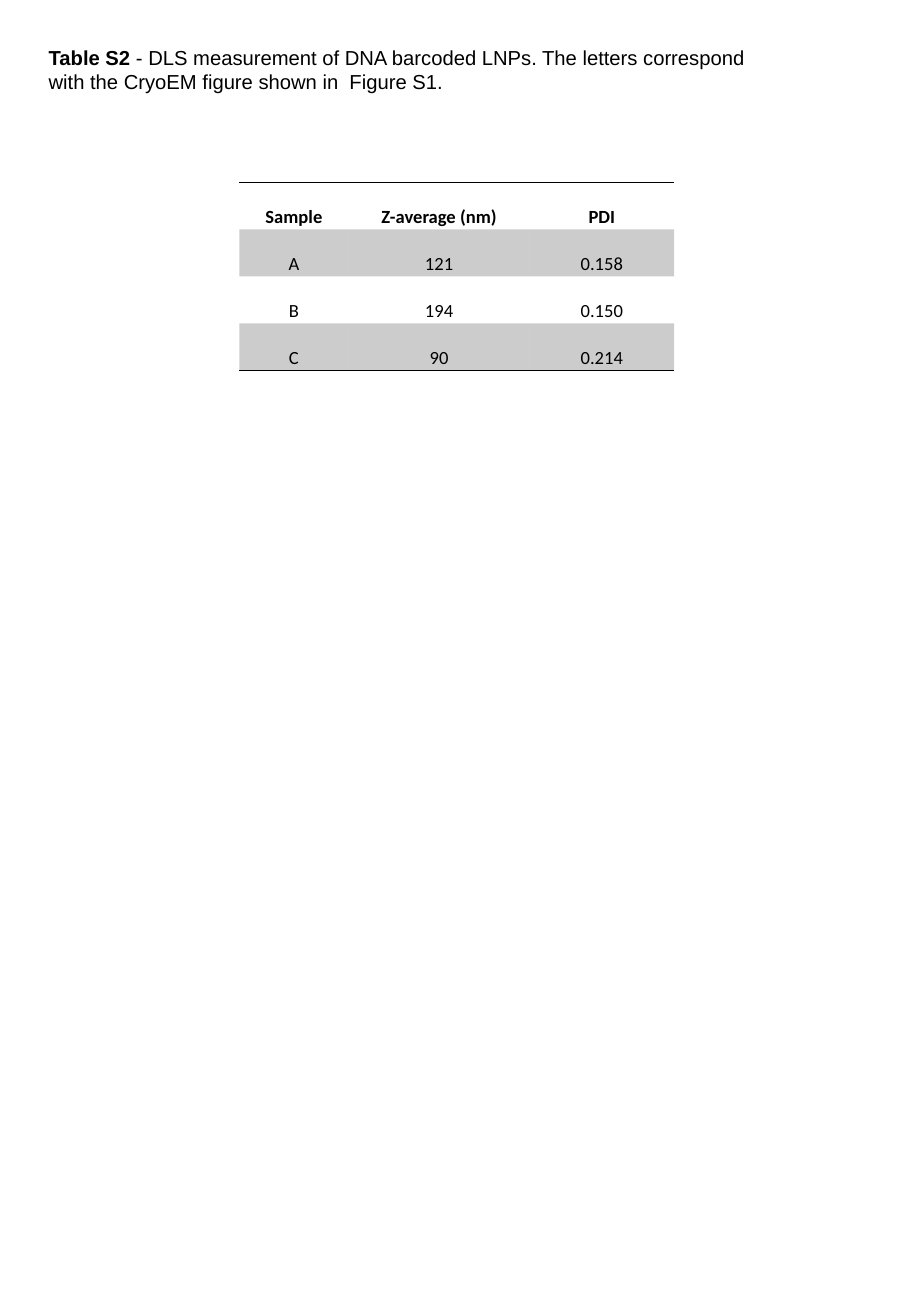
from lxml import etree
from pptx import Presentation
from pptx import util as u
from pptx.dml import color
from pptx.enum import text
from pptx.oxml import ns

BLACK = "000000"
NO_STYLE = "{2D5ABB26-0587-4C30-8999-92F81FD0307C}"
CAPTION = [
    ("Table S2 ", True),
    ("- DLS measurement of DNA barcoded LNPs. The letters correspond "
     "with the CryoEM figure shown in  Figure S1.", False),
]
MEASUREMENTS = [
    ("Sample", "Z-average (nm)", "PDI"),
    ("A", "121", "0.158"),
    ("B", "194", "0.150"),
    ("C", "90", "0.214"),
]
COLUMN_WIDTHS = (0.9, 1.49, 1.19)


def set_color(color_format, hex_value):
    color_format.rgb = color.RGBColor.from_string(hex_value)


def set_attributes(target, values):
    for name, value in values.items():
        setattr(target, name, value)


def add_run(paragraph, content, font_values):
    run = paragraph.add_run()
    run.text = content
    set_attributes(run.font, font_values)
    set_color(run.font.color, BLACK)


def add_borders(cell, sides):
    """Draw a 1 pt line on the named sides; the other sides stay empty."""
    properties = cell._tc.get_or_add_tcPr()
    for position, side in enumerate("LRTB"):
        line = etree.Element(ns.qn(f"a:ln{side}"), w=str(u.Pt(1)))
        if side in sides:
            fill = etree.SubElement(line, ns.qn("a:solidFill"))
            etree.SubElement(fill, ns.qn("a:srgbClr"), val=BLACK)
        else:
            etree.SubElement(line, ns.qn("a:noFill"))
        properties.insert(position, line)


def shade(cell, opacity):
    cell.fill.solid()
    set_color(cell.fill.fore_color, BLACK)
    shade_color = cell._tc.tcPr.find(".//" + ns.qn("a:srgbClr"))
    etree.SubElement(shade_color, ns.qn("a:alpha"), val=str(opacity * 1000))


def add_caption(slide, left, top, width, height):
    title = slide.shapes.title
    set_attributes(title, {
        "left": u.Inches(left), "top": u.Inches(top),
        "width": u.Inches(width), "height": u.Inches(height),
    })
    set_attributes(title.text_frame, {
        "word_wrap": True,
        "auto_size": text.MSO_AUTO_SIZE.NONE,
        "vertical_anchor": text.MSO_ANCHOR.TOP,
    })
    paragraph = title.text_frame.paragraphs[0]
    paragraph.alignment = text.PP_ALIGN.LEFT
    for content, bold in CAPTION:
        add_run(paragraph, content,
                {"name": "Arial", "size": u.Pt(12), "bold": bold})


def fill_cell(cell, content, is_header):
    set_attributes(cell, {
        "margin_left": u.Inches(0.07), "margin_right": u.Inches(0.07),
        "margin_top": 0, "margin_bottom": 0,
    })
    paragraph = cell.text_frame.paragraphs[0]
    set_attributes(paragraph, {
        "alignment": text.PP_ALIGN.CENTER,
        "line_spacing": 2.0,
        "space_after": u.Pt(8),
    })
    add_run(paragraph, content,
            {"name": "Calibri", "size": u.Pt(11), "bold": is_header})


def add_measurements(slide, left, top, width, height):
    row_count = len(MEASUREMENTS)
    frame = slide.shapes.add_table(
        row_count, len(COLUMN_WIDTHS),
        *(u.Inches(length) for length in (left, top, width, height)))
    table = frame.table
    set_attributes(table, {"first_row": False, "horz_banding": False})
    table._tbl.tblPr.find(ns.qn("a:tableStyleId")).text = NO_STYLE
    for column, column_width in zip(table.columns, COLUMN_WIDTHS):
        column.width = u.Inches(column_width)

    # Header and last row carry rules; every other data row is shaded
    row_borders = {0: "TB", row_count - 1: "B"}
    for row_index, values in enumerate(MEASUREMENTS):
        table.rows[row_index].height = u.Inches(height / row_count)
        for column_index, content in enumerate(values):
            cell = table.cell(row_index, column_index)
            fill_cell(cell, content, row_index == 0)
            if row_index % 2:
                shade(cell, 20)
            else:
                cell.fill.background()
            add_borders(cell, row_borders.get(row_index, ""))


def main():
    presentation = Presentation()
    presentation.slide_width = u.Inches(7.5)
    presentation.slide_height = u.Inches(10.83)
    title_only = presentation.slide_layouts[5]
    slide = presentation.slides.add_slide(title_only)
    add_caption(slide, 0.3, 0.32, 6.23, 0.71)
    add_measurements(slide, 1.97, 1.5, sum(COLUMN_WIDTHS), 1.55)
    presentation.save("out.pptx")


if __name__ == "__main__":
    main()
